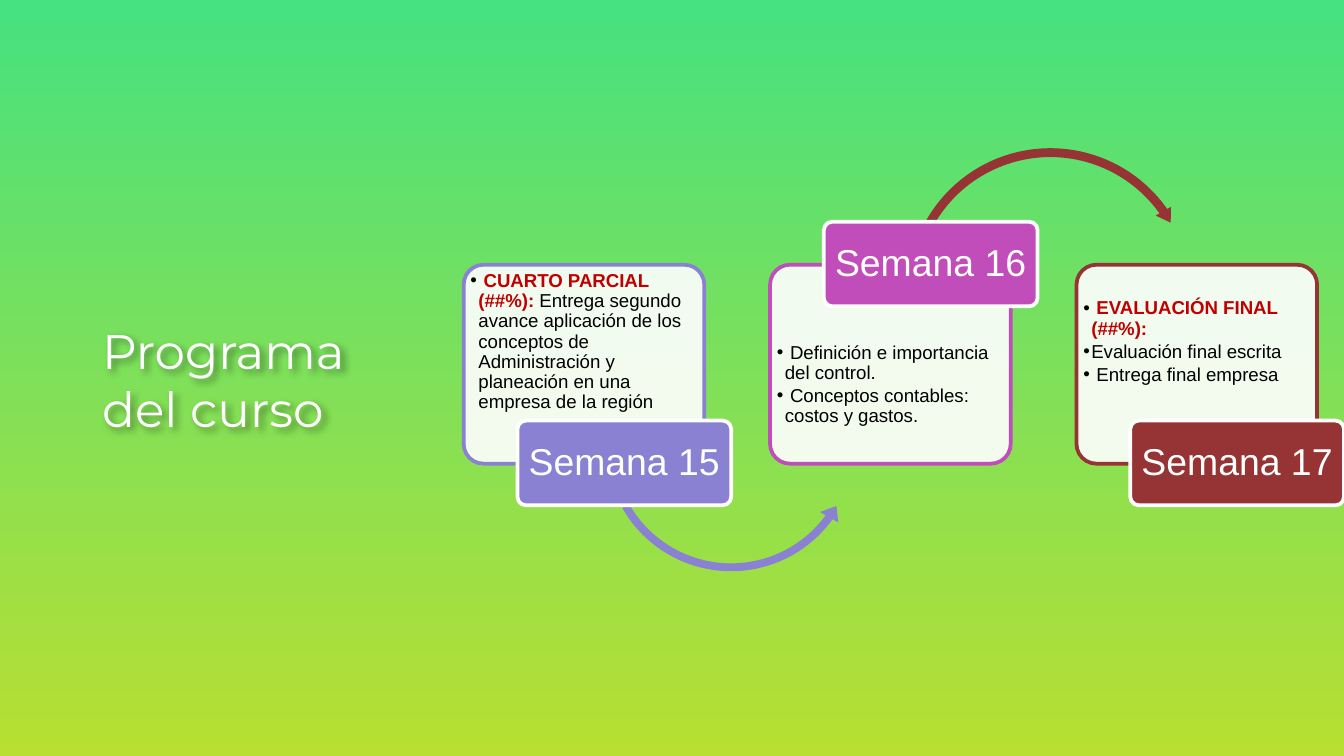
from dataclasses import dataclass

from lxml import etree
from pptx import Presentation
from pptx import util as u
from pptx.dml import color
from pptx.enum import shapes, text
from pptx.oxml import ns

SHAPE = shapes.MSO_SHAPE


@dataclass(frozen=True)
class Theme:
    top: str = "46E180"
    base: str = "B8DF32"
    white: str = "FFFFFF"
    ink: str = "000000"
    alert: str = "C00000"
    hues: tuple = ("8B81D2", "C14DBA", "963334")
    head: str = "Montserrat"
    body: str = "Arial"
    title: int = 26
    label: int = 20
    small: int = 10
    edge: int = 2


THEME = Theme()
WIDTH = 10
LEFT, STEP = 3.45, 2.28

# Week label and its points, each a pair of bold lead and plain text
WEEKS = [
    ("Semana 15", [
        (" CUARTO PARCIAL (##%): ",
         "Entrega segundo avance aplicación de los conceptos de "
         "Administración y planeación en una empresa de la región")]),
    ("Semana 16", [
        ("", " Definición e importancia del control."),
        ("", " Conceptos contables: costos y gastos.")]),
    ("Semana 17", [
        (" EVALUACIÓN FINAL (##%):", ""),
        ("", "Evaluación final escrita"),
        ("", " Entrega final empresa")]),
]

# Kind, left, top, size and adjustments of the arrow leaving each week
ARROWS = [
    (SHAPE.LEFT_CIRCULAR_ARROW, 4.46, 2.34, 1.96,
     (0.03, 3.8, 21.56, 90.25, 0.04)),
    (SHAPE.CIRCULAR_ARROW, 6.72, 1.07, 2.19,
     (0.03, 3.38, 194.87, 125.76, 0.03)),
]


def rgb(code):
    return color.RGBColor.from_string(code)


def add_node(parent, tag, **attrs):
    return etree.SubElement(parent, ns.qn(tag), attrs)


def style(run, size, face, hue, bold=False):
    font = run.font
    font.size, font.name, font.bold = u.Pt(size), face, bold
    font.color.rgb = rgb(hue)


def set_frame(frame, side=0.0, edge=0.0):
    frame.word_wrap = True
    frame.vertical_anchor = text.MSO_ANCHOR.MIDDLE
    frame.margin_left = frame.margin_right = u.Inches(side)
    frame.margin_top = frame.margin_bottom = u.Inches(edge)


def add_box(slide, kind, at, fill, line=None):
    shape = slide.shapes.add_shape(kind, *map(u.Inches, at))
    shape.shadow.inherit = False
    shape.fill.solid()
    shape.fill.fore_color.rgb = rgb(fill)
    if line:
        shape.line.color.rgb = rgb(line)
        shape.line.width = u.Pt(THEME.edge)
        shape.adjustments[0] = 0.1
    else:
        shape.line.fill.background()
    return shape


def add_text(slide, at):
    return slide.shapes.add_textbox(*map(u.Inches, at))


def add_title(slide):
    box = add_text(slide, (0.76, 1, 2.21, 3.64))
    frame = box.text_frame
    set_frame(frame)
    frame.text = "Programa del curso"
    style(frame.paragraphs[0].runs[0], THEME.title, THEME.head, THEME.white)
    # The box has no fill, so its shadow falls from the letters
    effect = add_node(box._element.spPr, "a:effectLst")
    shadow = add_node(effect, "a:outerShdw", blurRad="50800", dist="38100",
                      dir="2700000", algn="tl", rotWithShape="0")
    tint = add_node(shadow, "a:srgbClr", val=THEME.ink)
    add_node(tint, "a:alpha", val="40000")


def add_card(slide, left, hue):
    card = add_box(slide, SHAPE.ROUNDED_RECTANGLE, (left, 1.97, 1.79, 1.48),
                   THEME.white, hue)
    tint = card.fill._xPr.find(ns.qn("a:solidFill"))[0]
    add_node(tint, "a:alpha", val="90000")


def add_points(slide, left, top, points):
    frame = add_text(slide, (left, top, 1.72, 1.09)).text_frame
    set_frame(frame, 0.02, 0.02)
    for i, (lead, rest) in enumerate(points):
        para = frame.add_paragraph() if i else frame.paragraphs[0]
        para.line_spacing, para.space_after = 0.9, u.Pt(1.5)
        props = para._p.get_or_add_pPr()
        props.set("marL", str(u.Inches(0.06)))
        props.set("indent", str(u.Inches(-0.06)))
        tint = add_node(props, "a:buClr")
        add_node(tint, "a:srgbClr", val=THEME.ink)
        add_node(props, "a:buFont", typeface=THEME.body)
        add_node(props, "a:buChar", char="•")
        for words, hue, bold in ((lead, THEME.alert, True),
                                 (rest, THEME.ink, False)):
            if words:
                run = para.add_run()
                run.text = words
                style(run, THEME.small, THEME.body, hue, bold)


def add_arrow(slide, hue, kind, left, top, size, turns):
    arrow = add_box(slide, kind, (left, top, size, size), hue)
    for i, value in enumerate(turns):
        arrow.adjustments[i] = value


def add_label(slide, left, top, hue, words):
    label = add_box(slide, SHAPE.ROUNDED_RECTANGLE, (left, top, 1.59, 0.63),
                    hue, THEME.white)
    frame = label.text_frame
    set_frame(frame, 0.04, 0.03)
    frame.text = words
    para = frame.paragraphs[0]
    para.alignment = text.PP_ALIGN.CENTER
    para.line_spacing = 0.9
    style(para.runs[0], THEME.label, THEME.body, THEME.white)


def paint(slide):
    """Fill the background from top to bottom."""
    fill = slide.background.fill
    fill.gradient()
    fill.gradient_angle = 270
    for stop, hue in zip(fill.gradient_stops, (THEME.top, THEME.base)):
        stop.color.rgb = rgb(hue)


def main():
    deck = Presentation()
    deck.slide_width = u.Inches(WIDTH)
    deck.slide_height = u.Inches(WIDTH * 9 / 16)
    slide = deck.slides.add_slide(deck.slide_layouts[6])
    paint(slide)
    add_title(slide)
    for i, (name, points) in enumerate(WEEKS):
        left, hue = LEFT + i * STEP, THEME.hues[i]
        raised = i % 2 == 1
        add_card(slide, left, hue)
        add_points(slide, left + 0.03, 2.32 if raised else 2, points)
        if i < len(ARROWS):
            # An arrow over the cards takes the colour of the week it reaches
            add_arrow(slide, THEME.hues[i + raised], *ARROWS[i])
        add_label(slide, left + 0.4, 1.65 if raised else 3.13, hue, name)
    deck.save("out.pptx")


if __name__ == "__main__":
    main()
